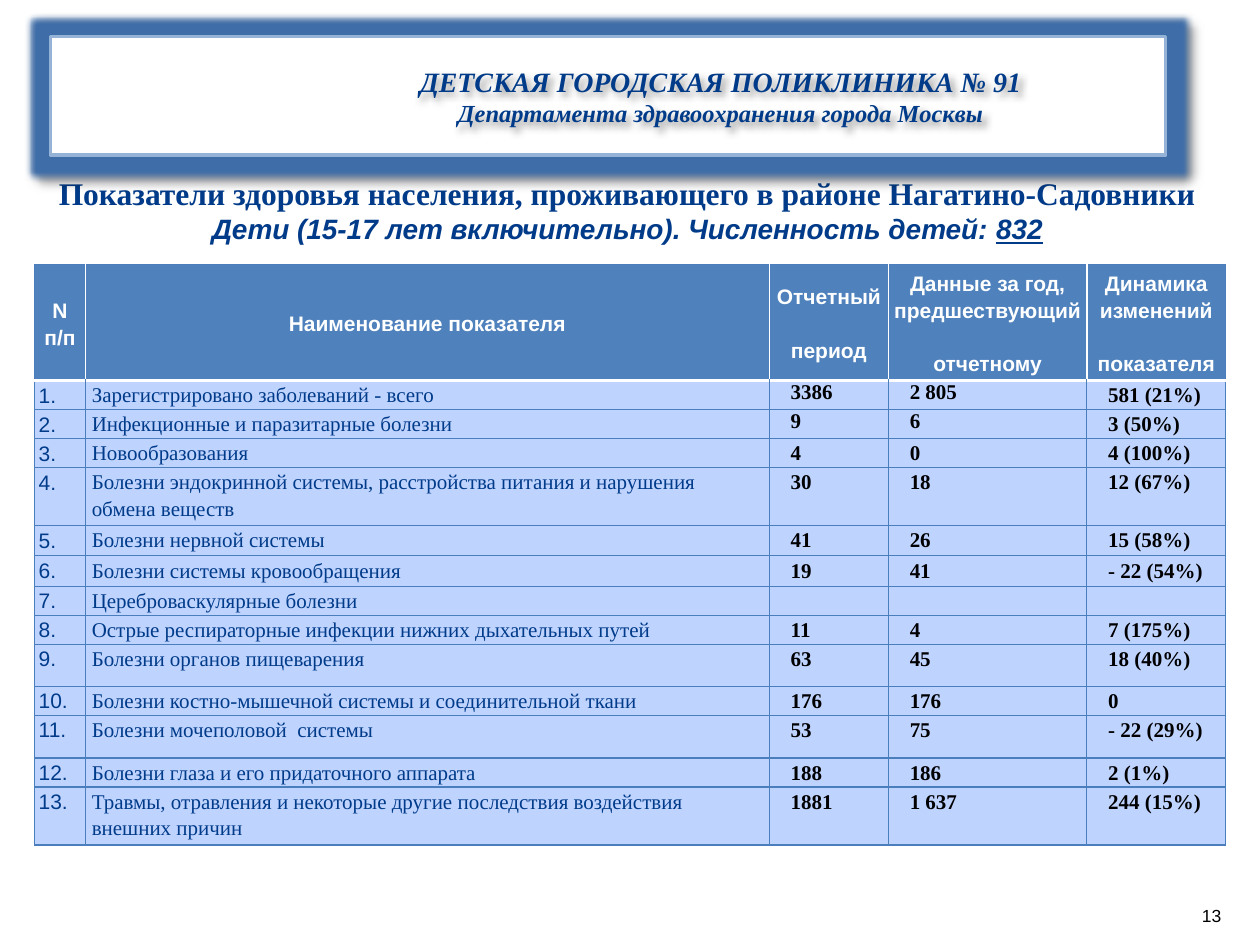
import lxml.etree
import pptx
import pptx.dml.color
import pptx.enum.shapes
import pptx.enum.text
import pptx.oxml
import pptx.oxml.ns
import pptx.util

Cm = pptx.util.Cm
Pt = pptx.util.Pt
ALIGN = pptx.enum.text.PP_ALIGN
ANCHOR = pptx.enum.text.MSO_ANCHOR
NAMESPACE = pptx.oxml.ns.nsdecls("a")
COLORS = {
    "navy": "003B89", "black": "000000", "white": "FFFFFF", "frame": "95B3D7",
    "header": "4F81BD", "body": "BFD3FF", "grid": "4B7EBC", "glow": "3E6DA8",
}
SERIF, SANS = "Times New Roman", "Arial"


def style(paragraph, color, **values):
    """Set font values and colour on every run of the paragraph."""
    for run in paragraph.runs:
        for name, value in values.items():
            setattr(run.font, name, value)
        run.font.color.rgb = pptx.dml.color.RGBColor.from_string(COLORS[color])


def add_effects(shape, glow=""):
    """Give the shape a soft shadow, after an optional glow element."""
    shape.shadow.inherit = False
    properties = shape._element.spPr
    properties.remove(properties.find(pptx.oxml.ns.qn("a:effectLst")))
    properties.append(pptx.oxml.parse_xml(
        f'<a:effectLst {NAMESPACE}>{glow}<a:outerShdw blurRad="50800" dist="38100" dir="2700000" '
        f'algn="tl" rotWithShape="0"><a:srgbClr val="{COLORS["black"]}"><a:alpha val="40000"/>'
        '</a:srgbClr></a:outerShdw></a:effectLst>'))


presentation = pptx.Presentation()
presentation.slide_width, presentation.slide_height = Cm(25.4), Cm(19.05)
slide = presentation.slides.add_slide(presentation.slide_layouts[5])

# Banner
banner = slide.shapes.add_group_shape()
frame = banner.shapes.add_shape(
    pptx.enum.shapes.MSO_SHAPE.RECTANGLE, Cm(1.02), Cm(0.74), Cm(22.48), Cm(2.39))
frame.fill.solid()
frame.fill.fore_color.rgb = pptx.dml.color.RGBColor.from_string(COLORS["white"])
frame.line.color.rgb = pptx.dml.color.RGBColor.from_string(COLORS["frame"])
frame.line.width = Pt(2)
add_effects(frame, f'<a:glow rad="101600"><a:srgbClr val="{COLORS["glow"]}"/></a:glow>')

clinic = banner.shapes.add_textbox(Cm(3.71), Cm(0.53), Cm(21.64), Cm(2.82))
clinic.text_frame.word_wrap = True
clinic.text_frame.vertical_anchor = ANCHOR.MIDDLE
clinic.text_frame.text = ("ДЕТСКАЯ ГОРОДСКАЯ ПОЛИКЛИНИКА № 91\n"
                          "Департамента здравоохранения города Москвы")
for paragraph, size in zip(clinic.text_frame.paragraphs, (16, 14)):
    paragraph.alignment = ALIGN.CENTER
    style(paragraph, "navy", name=SERIF, size=Pt(size), bold=True, italic=True)
add_effects(clinic)

# Title
title = slide.shapes.title
title.left, title.top, title.width, title.height = Cm(0.2), Cm(3.33), Cm(24.89), Cm(1.8)
title.text_frame.auto_size = pptx.enum.text.MSO_AUTO_SIZE.NONE
title.text_frame.vertical_anchor = ANCHOR.MIDDLE
paragraph = title.text_frame.paragraphs[0]
paragraph.alignment = ALIGN.CENTER
paragraph.add_run().text = "Показатели здоровья населения, проживающего в районе Нагатино-Садовники"
paragraph.add_line_break()
paragraph.add_run().text = "Дети (15-17 лет включительно). Численность детей: "
paragraph.add_run().text = "832"
style(paragraph, "navy", name=SANS, size=Pt(16), bold=True, italic=True)
heading, _, count = paragraph.runs
for name, value in {"name": SERIF, "size": Pt(18), "italic": False}.items():
    setattr(heading.font, name, value)
count.font.underline = True

# Table
headers = [
    "N\nп/п", "Наименование показателя", "Отчетный\nпериод",
    "Данные за год, предшествующий\nотчетному", "Динамика\nизменений\nпоказателя",
]
indicators = [
    ("Зарегистрировано заболеваний - всего", "3386", "2 805", "581 (21%)"),
    ("Инфекционные и паразитарные болезни", "9", "6", "3 (50%)"),
    ("Новообразования", "4", "0", "4 (100%)"),
    ("Болезни эндокринной системы, расстройства питания и нарушения обмена веществ",
     "30", "18", "12 (67%)"),
    ("Болезни нервной системы", "41", "26", "15 (58%)"),
    ("Болезни системы кровообращения", "19", "41", "- 22 (54%)"),
    ("Цереброваскулярные болезни", "", "", ""),
    ("Острые респираторные инфекции нижних дыхательных путей", "11", "4", "7 (175%)"),
    ("Болезни органов пищеварения", "63", "45", "18 (40%)"),
    ("Болезни костно-мышечной системы и соединительной ткани", "176", "176", "0"),
    ("Болезни мочеполовой  системы", "53", "75", "- 22 (29%)"),
    ("Болезни глаза и его придаточного аппарата", "188", "186", "2 (1%)"),
    ("Травмы, отравления и некоторые другие последствия воздействия внешних причин",
     "1881", "1 637", "244 (15%)"),
]
rows = [headers] + [(f"{number}.", *values) for number, values in enumerate(indicators, 1)]
column_widths = [1.02, 13.79, 2.4, 4.0, 2.8]
row_heights = [2.34, 0.58, 0.58, 0.58, 1.17, 0.61, 0.61, 0.58, 0.58, 0.85, 0.58, 0.86, 0.58, 1.17]

table_frame = slide.shapes.add_table(len(rows), len(headers), Cm(0.7), Cm(5.33),
                                     Cm(sum(column_widths)), Cm(sum(row_heights)))
table = table_frame.table
for column, width in zip(table.columns, column_widths):
    column.width = Cm(width)
for row, height in zip(table.rows, row_heights):
    row.height = Cm(height)

for row_index, texts in enumerate(rows):
    is_header = row_index == 0
    for column_index, text in enumerate(texts):
        cell = table.cell(row_index, column_index)
        is_value = column_index > 1 and not is_header
        side_margin = 0.08 if is_header or column_index == 0 else 0.13
        cell.margin_left = Cm(0.43 if is_value else side_margin)
        cell.margin_right = Cm(side_margin)
        cell.margin_top = cell.margin_bottom = 0
        cell.vertical_anchor = ANCHOR.MIDDLE if is_header else ANCHOR.TOP

        edges = {"L": "grid", "R": "grid", "T": "grid", "B": "grid"}
        if is_header:
            edges = {"T": "grid", "B": "white"}
            if column_index == 0:
                edges = {"L": "grid", **edges}
            elif column_index == len(headers) - 1:
                edges = {"R": "grid", **edges}
        elif row_index == 1:
            edges["T"] = "white"
        for edge, color in edges.items():
            width = Pt(2) if color == "white" else Pt(0.75)
            cell._tc.get_or_add_tcPr().append(pptx.oxml.parse_xml(
                f'<a:ln{edge} {NAMESPACE} w="{width}"><a:solidFill>'
                f'<a:srgbClr val="{COLORS[color]}"/></a:solidFill></a:ln{edge}>'))
        cell.fill.solid()
        cell.fill.fore_color.rgb = pptx.dml.color.RGBColor.from_string(
            COLORS["header" if is_header else "body"])

        cell.text_frame.text = text
        color = "white" if is_header else "black" if is_value else "navy"
        font_name = SANS if is_header or column_index == 0 else SERIF
        for paragraph in cell.text_frame.paragraphs:
            paragraph.line_spacing = 1.0 if row_index in (1, 2) and column_index in (2, 3) else 1.15
            paragraph.alignment = ALIGN.CENTER if is_header else ALIGN.LEFT
            style(paragraph, color, name=font_name, size=Pt(12), bold=is_header or is_value)
            if not text:
                lxml.etree.SubElement(
                    paragraph._p, pptx.oxml.ns.qn("a:endParaRPr")).set("sz", "1200")
        if is_header and column_index > 1:
            paragraph.space_before = Pt(15)

# Slide number
page = slide.shapes.add_textbox(Cm(24.23), Cm(18.24), Cm(0.58), Cm(0.43))
for name in ("margin_left", "margin_top", "margin_right", "margin_bottom"):
    setattr(page.text_frame, name, 0)
page.text_frame.word_wrap = False
page.text_frame.vertical_anchor = ANCHOR.MIDDLE
page.text_frame.text = "13"
style(page.text_frame.paragraphs[0], "black", name=SANS, size=Pt(10))

presentation.save("out.pptx")
